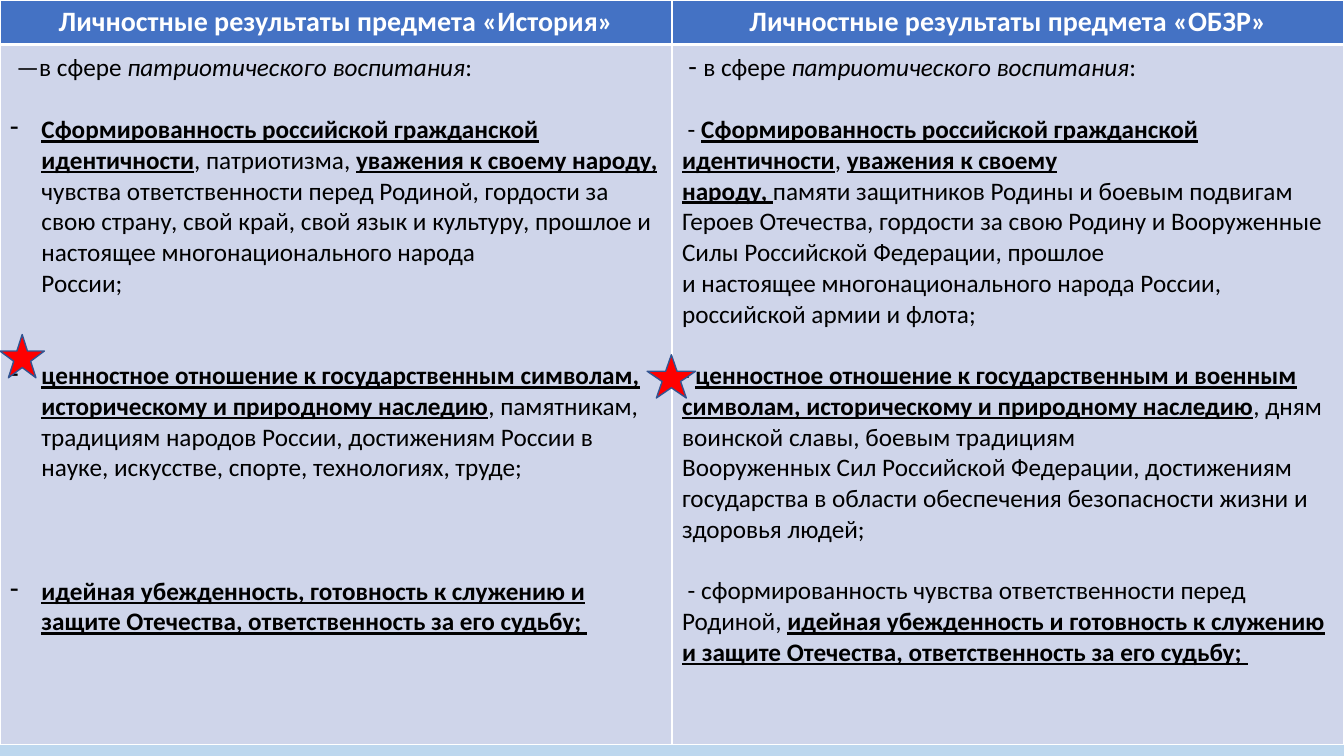
from lxml import etree
from pptx import Presentation
from pptx.dml.color import RGBColor
from pptx.enum.shapes import MSO_SHAPE
from pptx.enum.text import PP_ALIGN
from pptx.oxml.ns import qn
from pptx.util import Cm, Pt

STAR = MSO_SHAPE.STAR_5_POINT
CENTER = PP_ALIGN.CENTER

WHITE = RGBColor(0xFF, 0xFF, 0xFF)
BLACK = RGBColor(0, 0, 0)
SKY = RGBColor(0xBD, 0xD7, 0xEE)
BLUE = RGBColor(0x44, 0x72, 0xC4)
PALE = RGBColor(0xCF, 0xD5, 0xEA)
RED = RGBColor(0xFF, 0, 0)
NAVY = RGBColor(0x32, 0x54, 0x91)

FONT = "Calibri"
LINE = 22  # height of one text line, points
WIDE, HIGH = 33.87, 19.05
HEAD, BODY = 1.12, 17.65

TITLES = [
    "Личностные результаты предмета «История»",
    "Личностные результаты предмета «ОБЗР»",
]

# Each paragraph: lines of space before, bullet, runs of (text, style, size);
# style "key" is bold and underlined, "term" is italic.
HISTORY = [
    (0, False, [(" ", "", 20), ("—в сфере ", "", 18),
                ("патриотического воспитания", "term", 18), (":", "", 18)]),
    (1, True, [
        ("Сформированность российской гражданской идентичности", "key", 18),
        (", патриотизма, ", "", 18),
        ("уважения к своему народу, ", "key", 18),
        ("чувства ответственности перед Родиной, гордости за свою страну, "
         "свой край, свой язык и культуру, прошлое и настоящее "
         "многонационального народа\nРоссии;", "", 18)]),
    (2, True, [
        ("ценностное отношение к государственным символам,\n"
         "историческому и природному наследию", "key", 18),
        (", памятникам, традициям народов России, достижениям России в "
         "науке, искусстве, спорте, технологиях, труде;", "", 18)]),
    (3, True, [
        ("идейная убежденность, готовность к служению и защите Отечества, "
         "ответственность за его судьбу; ", "key", 18)]),
]
DEFENCE = [
    (0, False, [(" - ", "", 20), ("в сфере ", "", 18),
                ("патриотического воспитания", "term", 18), (":", "", 18)]),
    (1, False, [
        (" - ", "", 18),
        ("Сформированность российской гражданской идентичности", "key", 18),
        (", ", "", 18),
        ("уважения к своему\nнароду, ", "key", 18),
        ("памяти защитников Родины и боевым подвигам Героев Отечества, "
         "гордости за свою Родину и Вооруженные Силы Российской Федерации, "
         "прошлое\nи настоящее многонационального народа России, "
         "российской армии и флота;", "", 18)]),
    (1, False, [
        ("- ", "", 18),
        ("ценностное отношение к государственным и военным символам, "
         "историческому и природному наследию", "key", 18),
        (", дням воинской славы, боевым традициям\nВооруженных Сил "
         "Российской Федерации, достижениям государства в области "
         "обеспечения безопасности жизни и здоровья людей;", "", 18)]),
    (1, False, [
        (" - сформированность чувства ответственности перед Родиной, ", "", 18),
        ("идейная убежденность и готовность к служению и защите Отечества, "
         "ответственность за его судьбу; ", "key", 18)]),
]


def add_text(para, text, size, color, bold=False, line=False, slant=False):
    """Add runs to para, with a line break at each newline."""
    for i, part in enumerate(text.split("\n")):
        if i:
            para.add_line_break()
        run = para.add_run()
        run.text = part
        font = run.font
        font.name, font.size = FONT, Pt(size)
        font.bold, font.underline, font.italic = bold, line, slant
        font.color.rgb = color


def add_dash(para):
    """Give para a hanging dash bullet."""
    props = para._p.get_or_add_pPr()
    props.set("marL", str(Cm(0.79)))
    props.set("indent", str(-Cm(0.79)))
    etree.SubElement(props, qn("a:buChar")).set("char", "-")


def paint(cell, color, top, bottom):
    """Fill a cell and rule white borders, widths in points."""
    cell.fill.solid()
    cell.fill.fore_color.rgb = color
    props = cell._tc.get_or_add_tcPr()
    sides = [("L", 1), ("R", 1), ("T", top), ("B", bottom)]
    for i, (side, width) in enumerate(sides):
        rule = etree.Element(qn("a:ln" + side), w=str(Pt(width)))
        fill = etree.SubElement(rule, qn("a:solidFill"))
        etree.SubElement(fill, qn("a:srgbClr")).set("val", str(WHITE))
        props.insert(i, rule)


def fill_head(cell, title):
    paint(cell, BLUE, 1, 3)
    para = cell.text_frame.paragraphs[0]
    para.alignment = CENTER
    add_text(para, title, 20, WHITE, bold=True)


def fill_body(cell, items):
    paint(cell, PALE, 3, 1)
    frame = cell.text_frame
    for i, (gap, dash, runs) in enumerate(items):
        para = frame.add_paragraph() if i else frame.paragraphs[0]
        para.space_before = Pt(gap * LINE)
        if dash:
            add_dash(para)
        for text, style, size in runs:
            key = style == "key"
            add_text(para, text, size, BLACK, key, key, style == "term")


def add_grid(slide, left, top, width):
    frame = slide.shapes.add_table(
        2, 2, Cm(left), Cm(top), Cm(width), Cm(HEAD + BODY))
    table = frame.table
    table.rows[0].height = Cm(HEAD)
    table.rows[1].height = Cm(BODY)
    for col, items in enumerate([HISTORY, DEFENCE]):
        fill_head(table.cell(0, col), TITLES[col])
        fill_body(table.cell(1, col), items)


def add_star(slide, left, top, width, height):
    star = slide.shapes.add_shape(
        STAR, Cm(left), Cm(top), Cm(width), Cm(height))
    star.shadow.inherit = False
    star.fill.solid()
    star.fill.fore_color.rgb = RED
    star.line.color.rgb = NAVY
    star.line.width = Pt(1)


def main():
    deck = Presentation()
    deck.slide_width, deck.slide_height = Cm(WIDE), Cm(HIGH)
    slide = deck.slides.add_slide(deck.slide_layouts[6])
    back = slide.background.fill
    back.solid()
    back.fore_color.rgb = SKY
    add_grid(slide, 0, 0, WIDE)
    add_star(slide, 0, 8.43, 1.12, 1.09)
    add_star(slide, 16.31, 8.94, 1.22, 1.09)
    deck.save("out.pptx")


if __name__ == "__main__":
    main()
